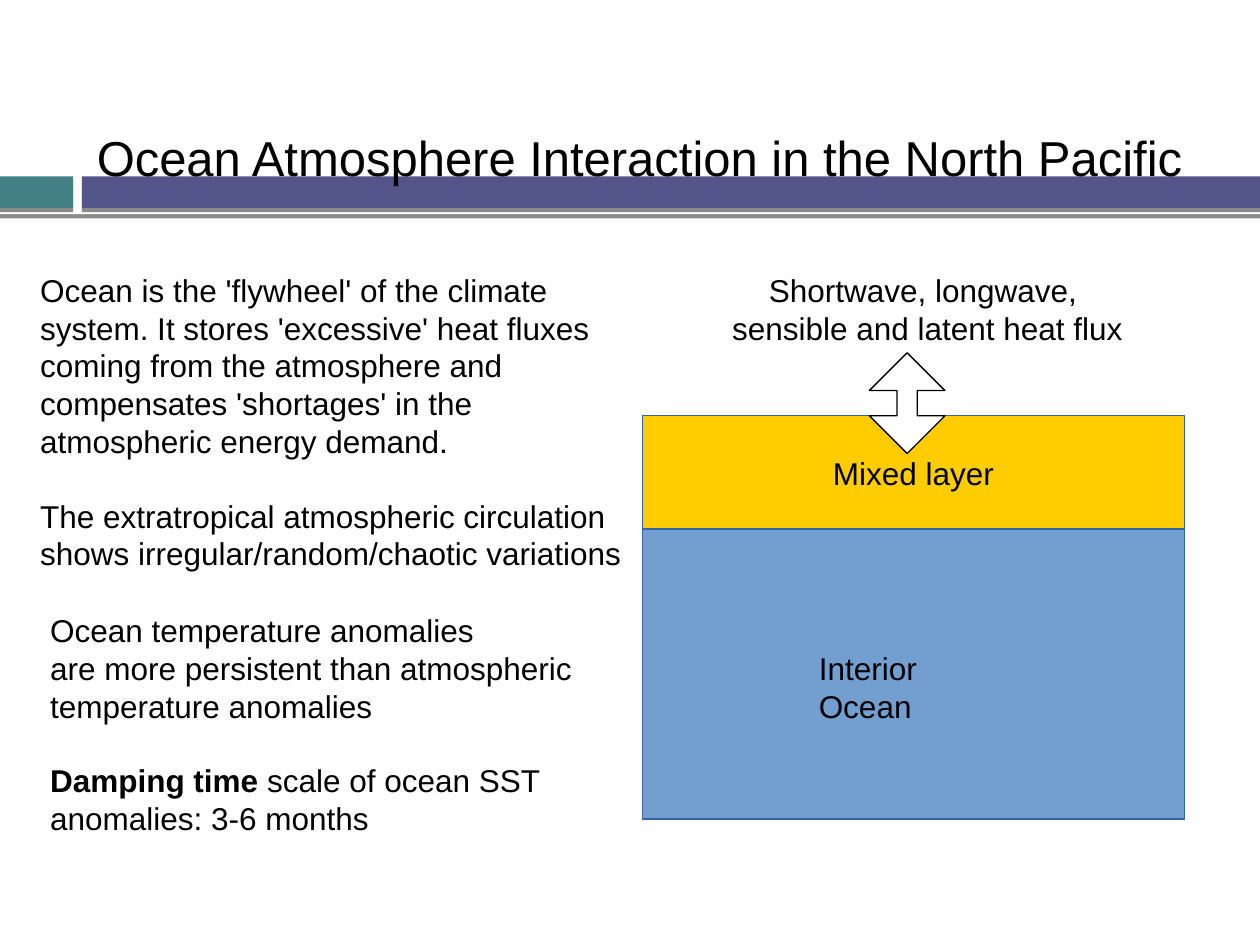
from dataclasses import dataclass

from lxml import etree
from pptx import Presentation
from pptx.dml.color import RGBColor
from pptx.enum import shapes, text
from pptx.oxml import ns
from pptx.util import Inches, Pt


@dataclass(frozen=True)
class Theme:
    font: str = "Arial"
    head: int = 28
    body: int = 18
    gap: int = 21
    edge: float = 0.75
    ink: str = "000000"
    white: str = "FFFFFF"
    teal: str = "438086"
    plum: str = "53548A"
    sea: str = "729FCF"
    rim: str = "3465A4"
    gold: str = "FFCC00"


THEME = Theme()
KIND = shapes.MSO_SHAPE
MID = text.PP_ALIGN.CENTER


def rgb(code):
    return RGBColor.from_string(code)


def style(para, size=THEME.body):
    para.font.name = THEME.font
    para.font.size = Pt(size)
    para.font.color.rgb = rgb(THEME.ink)


def add_form(slide, box, fill, line=None, kind=KIND.RECTANGLE):
    form = slide.shapes.add_shape(kind, *map(Inches, box))
    form.shadow.inherit = False
    form.fill.solid()
    form.fill.fore_color.rgb = rgb(fill)
    if line:
        form.line.color.rgb = rgb(line)
        form.line.width = Pt(THEME.edge)
    else:
        form.line.fill.background()
    return form


def add_bar(slide, box, fill):
    bar = add_form(slide, box, fill)
    glow = bar._element.spPr.find(ns.qn("a:effectLst"))
    cast = etree.SubElement(glow, ns.qn("a:outerShdw"), blurRad="0",
                            dist=str(Pt(2.4)), dir="5400000",
                            algn="ctr", rotWithShape="0")
    tint = etree.SubElement(cast, ns.qn("a:srgbClr"), val=THEME.ink)
    etree.SubElement(tint, ns.qn("a:alpha"), val="45000")


def add_text(slide, box, paras, size=THEME.body, align=None):
    frame = slide.shapes.add_textbox(*map(Inches, box)).text_frame
    frame.word_wrap = True
    for i, (words, gap) in enumerate(paras):
        para = frame.paragraphs[0] if i == 0 else frame.add_paragraph()
        para.text = words
        para.alignment = align
        if gap:
            para.space_before = Pt(gap)
        style(para, size)
    return frame


def add_layer(slide, box, fill, label=None):
    layer = add_form(slide, box, fill, THEME.rim)
    if label:
        frame = layer.text_frame
        frame.word_wrap = False
        frame.vertical_anchor = text.MSO_ANCHOR.MIDDLE
        para = frame.paragraphs[0]
        para.text = label
        para.alignment = MID
        style(para)


def add_flux(slide, box):
    arrow = add_form(slide, box, THEME.white, THEME.ink, KIND.UP_DOWN_ARROW)
    arrow.adjustments[0] = 0.5
    arrow.adjustments[1] = 0.27


def add_notes(slide):
    add_text(slide, (0.22, 2.1, 4.81, 3.18), [
        ("Ocean is the 'flywheel' of the climate \n"
         "system. It stores 'excessive' heat fluxes\n"
         "coming from the atmosphere and \n"
         "compensates 'shortages' in the \n"
         "atmospheric energy demand.", 0),
        ("The extratropical atmospheric circulation\n"
         "shows irregular/random/chaotic variations", THEME.gap),
    ])
    frame = add_text(slide, (0.3, 4.8, 4.34, 1.78), [
        ("Ocean temperature anomalies\n"
         "are more persistent than atmospheric", 0),
        ("temperature anomalies", 0),
        ("Damping time ", THEME.gap),
    ])
    para = frame.paragraphs[-1]
    para.runs[0].font.bold = True
    para.add_run().text = "scale of ocean SST "
    para.add_line_break()
    para.add_run().text = "anomalies: 3-6 months"


def main():
    deck = Presentation()
    deck.slide_width, deck.slide_height = Inches(10), Inches(7.5)
    slide = deck.slides.add_slide(deck.slide_layouts[6])

    add_bar(slide, (0, 1.35, 10, 0.35), THEME.white)
    add_bar(slide, (0, 1.4, 0.58, 0.25), THEME.teal)
    add_bar(slide, (0.65, 1.4, 9.35, 0.25), THEME.plum)
    add_text(slide, (0.67, 0.96, 8.9, 0.53),
             [("Ocean Atmosphere Interaction in the North Pacific", 0)],
             THEME.head)

    add_layer(slide, (5.1, 4.1, 4.3, 2.4), THEME.sea)
    add_layer(slide, (5.1, 3.3, 4.3, 0.9), THEME.gold, "Mixed layer")
    add_text(slide, (6.4, 5.1, 1.78, 0.38), [("Interior Ocean", 0)])
    add_flux(slide, (6.9, 2.8, 0.6, 0.8))
    add_text(slide, (5.71, 2.1, 3.3, 0.64),
             [("Shortwave, longwave, ", 0),
              ("sensible and latent heat flux", 0)], align=MID)
    add_notes(slide)
    deck.save("out.pptx")


if __name__ == "__main__":
    main()
